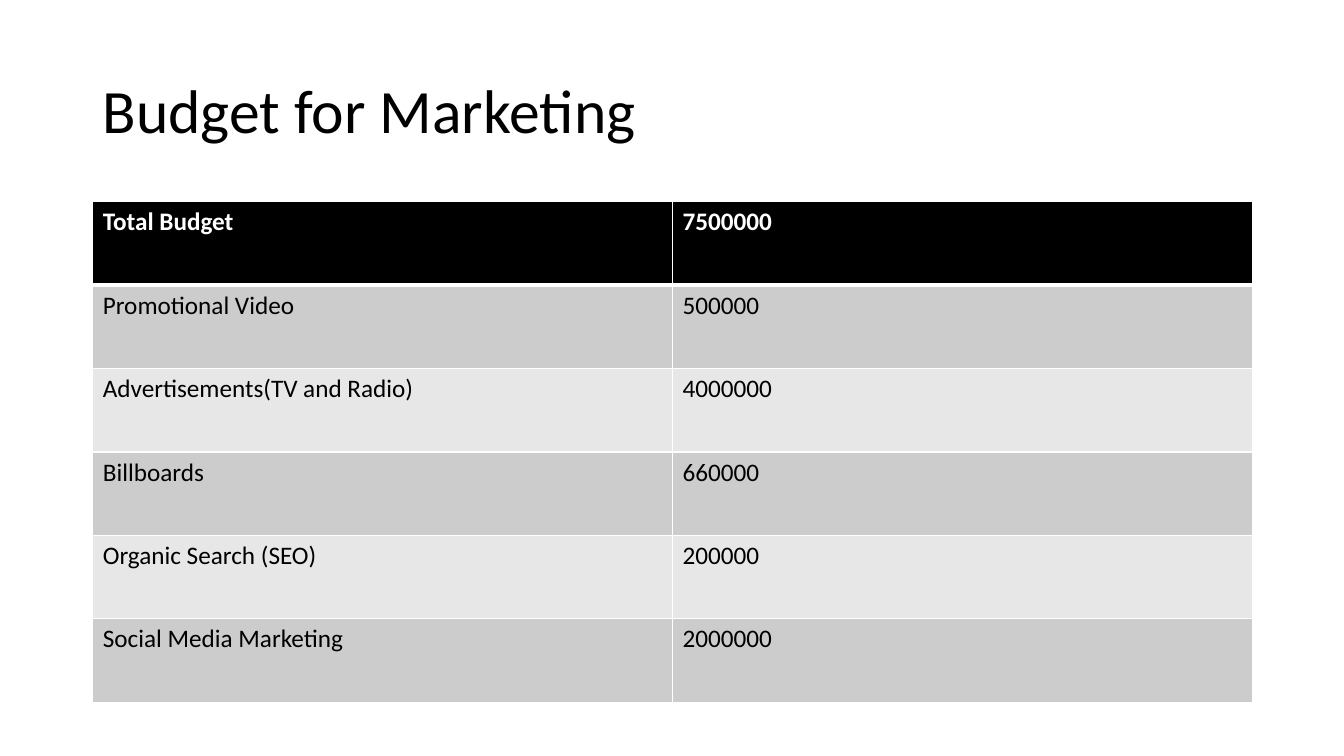
from lxml import etree
from pptx import Presentation
from pptx.dml.color import RGBColor
from pptx.enum.text import MSO_ANCHOR, PP_ALIGN
from pptx.oxml.ns import qn
from pptx.util import Inches, Pt

LEFT = PP_ALIGN.LEFT
TOP = MSO_ANCHOR.TOP
MIDDLE = MSO_ANCHOR.MIDDLE
TITLE_ONLY = 5

BUDGET = [
    ("Total Budget", "7500000"),
    ("Promotional Video", "500000"),
    ("Advertisements(TV and Radio)", "4000000"),
    ("Billboards", "660000"),
    ("Organic Search (SEO)", "200000"),
    ("Social Media Marketing", "2000000"),
]


def color(value):
    return RGBColor.from_string(value)


def write_text(frame, text, size=18, fill="000000", bold=False,
               font="Calibri", spacing=1.0):
    frame.word_wrap = True
    paragraph = frame.paragraphs[0]
    paragraph.alignment = LEFT
    paragraph.line_spacing = spacing
    run = paragraph.add_run()
    run.text = text
    run.font.name = font
    run.font.size = Pt(size)
    run.font.bold = bold
    run.font.color.rgb = color(fill)


def add_border(cell, side, width, line_color):
    properties = cell._tc.get_or_add_tcPr()
    line = etree.SubElement(properties, qn(f"a:ln{side}"), w=str(Pt(width)))
    solid = etree.SubElement(line, qn("a:solidFill"))
    etree.SubElement(solid, qn("a:srgbClr"), val=line_color)


class BudgetSlide:
    white, black = "FFFFFF", "000000"
    bands = ("CCCCCC", "E7E7E7")
    left, width = 0.92, 11.5

    def __init__(self, presentation):
        layout = presentation.slide_layouts[TITLE_ONLY]
        self.slide = presentation.slides.add_slide(layout)
        self.slide.background.fill.solid()
        self.slide.background.fill.fore_color.rgb = color(self.white)

    def add_title(self, text, top, height):
        title = self.slide.shapes.title
        title.left, title.top = Inches(self.left), Inches(top)
        title.width, title.height = Inches(self.width), Inches(height)
        title.text_frame.vertical_anchor = MIDDLE
        write_text(title.text_frame, text, size=44, fill=self.black, spacing=0.9)

    def add_table(self, rows, top, height):
        frame = self.slide.shapes.add_table(
            len(rows), len(rows[0]), Inches(self.left), Inches(top),
            Inches(self.width), Inches(height))
        for row_index, row in enumerate(rows):
            for column_index, text in enumerate(row):
                cell = frame.table.cell(row_index, column_index)
                self.format_cell(cell, text, row_index)

    def format_cell(self, cell, text, row_index):
        header = row_index == 0
        # The rule under the header is thicker than the others
        widths = {"L": 1, "R": 1, "T": 3 if row_index == 1 else 1,
                  "B": 3 if header else 1}
        for side, width in widths.items():
            add_border(cell, side, width, self.white)
        cell.fill.solid()
        cell.fill.fore_color.rgb = color(
            self.black if header else self.bands[(row_index - 1) % 2])
        cell.vertical_anchor = TOP
        write_text(cell.text_frame, text, bold=header,
                   fill=self.white if header else self.black)


def main():
    presentation = Presentation()
    presentation.slide_width = Inches(13.33)
    presentation.slide_height = Inches(7.5)
    slide = BudgetSlide(presentation)

    # Title
    slide.add_title("Budget for Marketing", top=0.4, height=1.45)

    # Budget table
    slide.add_table(BUDGET, top=2, height=4.97)

    presentation.save("out.pptx")


if __name__ == "__main__":
    main()
